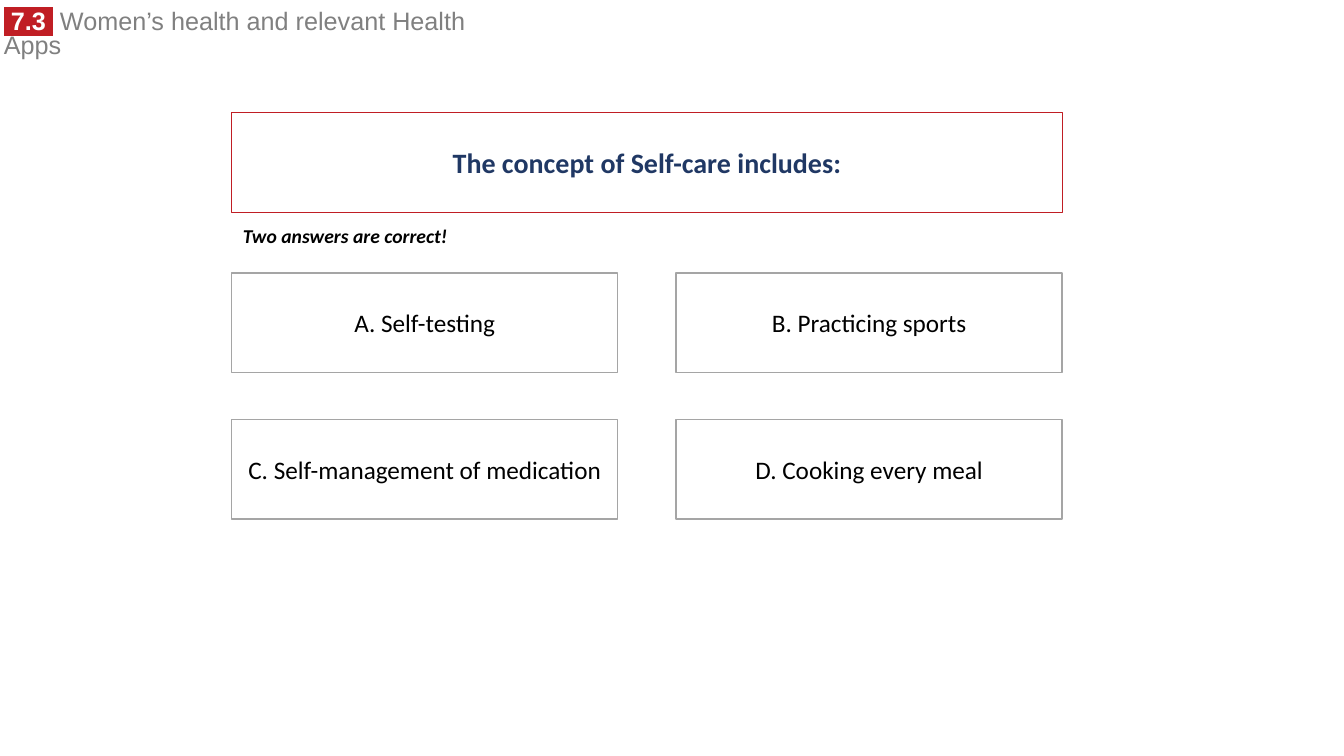
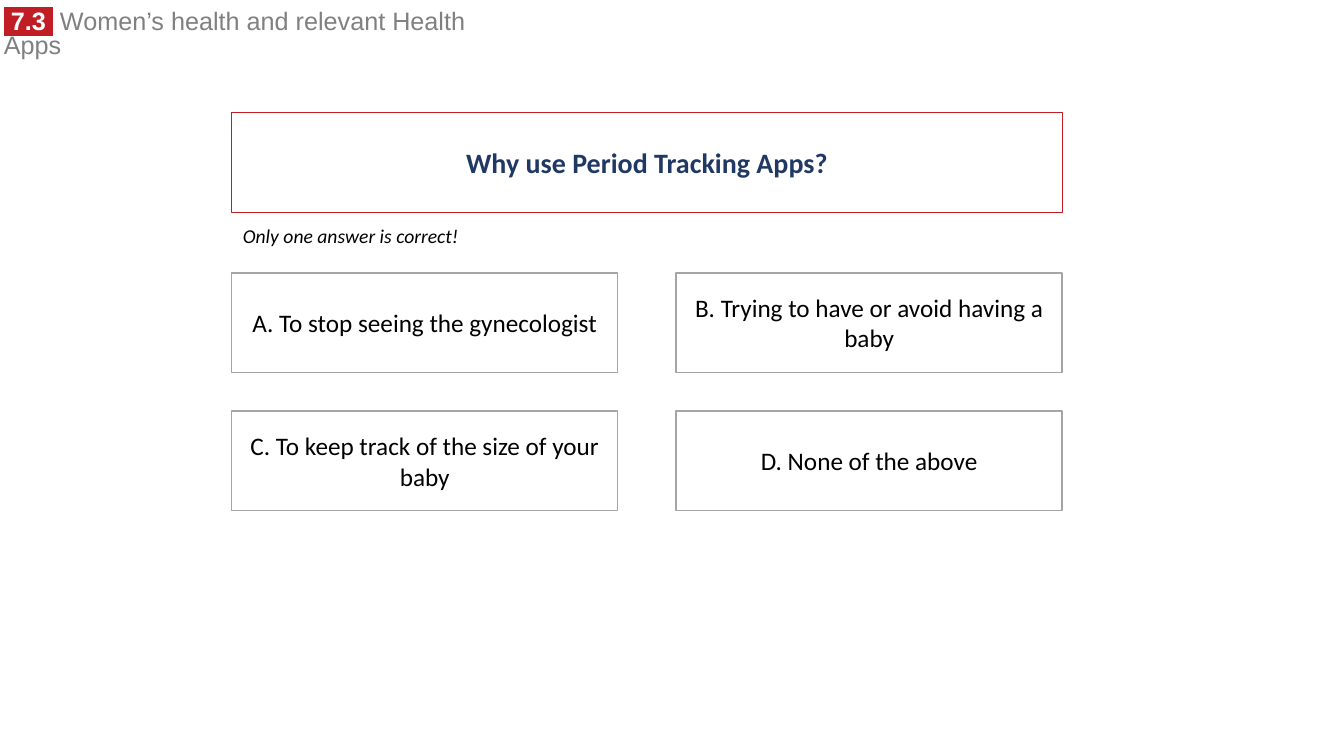
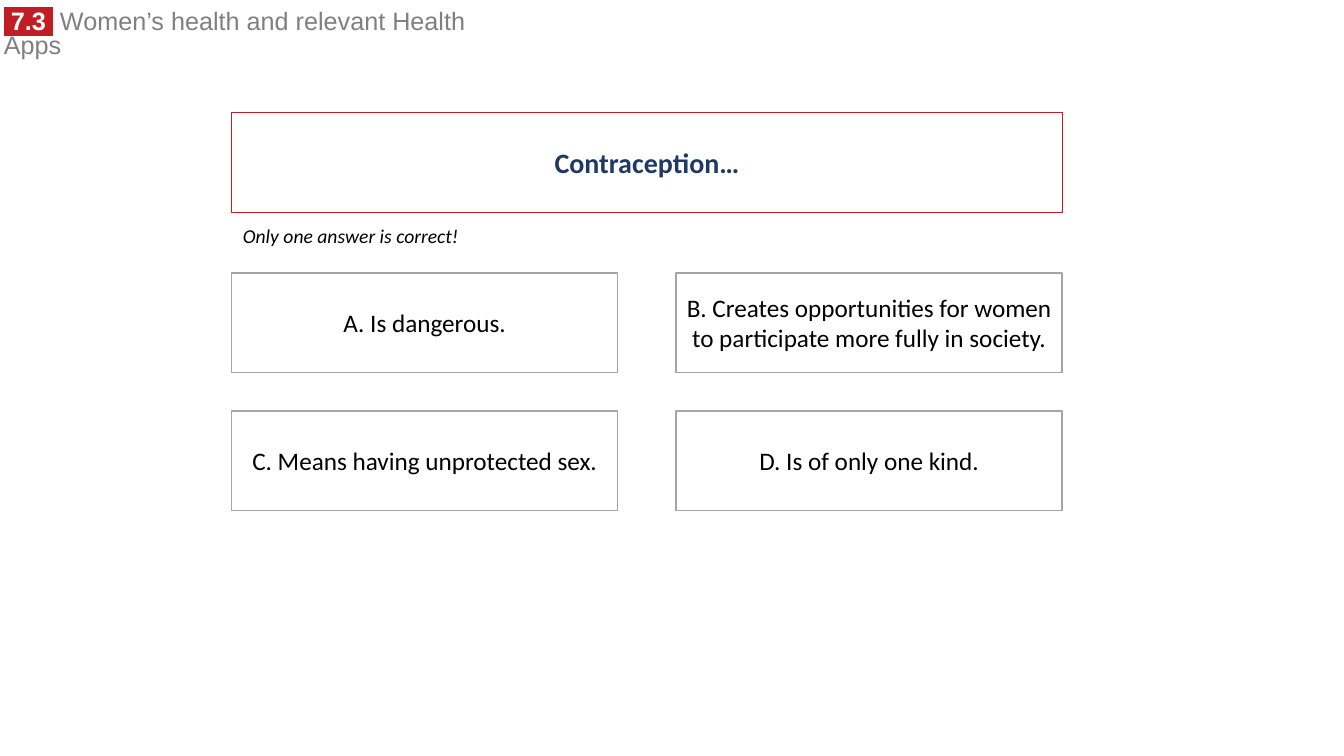
from dataclasses import dataclass

from lxml.etree import SubElement
from pptx import Presentation
from pptx.dml.color import RGBColor
from pptx.enum.shapes import MSO_SHAPE as Preset
from pptx.enum.text import MSO_ANCHOR as Anchor, MSO_AUTO_SIZE as AutoSize, PP_ALIGN as Align
from pptx.oxml.ns import qn
from pptx.util import Cm, Pt

# Content
SECTION = (" 7.3 ", " Women’s health and relevant Health Apps")
ONE_CORRECT = "Only one answer is correct!"
QUIZ = [
    {
        "question": "The concept of Self-care includes:",
        "note": "Two answers are correct!",
        "note_bold": True,
        "row_pitch": 3.69,
        "answers": ["A. Self-testing", "B. Practicing sports",
                    "C. Self-management of medication", "D. Cooking every meal"],
    },
    {
        "question": "Why use Period Tracking Apps?",
        "note": ONE_CORRECT,
        "note_bold": False,
        "row_pitch": 3.48,
        "answers": ["A. To stop seeing the gynecologist",
                    "B. Trying to have or avoid having a baby",
                    "C. To keep track of the size of your baby",
                    "D. None of the above"],
    },
    {
        "question": "Contraception…",
        "note": ONE_CORRECT,
        "note_bold": False,
        "row_pitch": 3.48,
        "answers": ["A. Is dangerous.",
                    "B. Creates opportunities for women to participate more fully in society.",
                    "C. Means having unprotected sex.", "D. Is of only one kind."],
    },
]


@dataclass(frozen=True)
class Theme:
    white: str = "FFFFFF"
    black: str = "000000"
    red: str = "C01E24"
    navy: str = "203864"
    header_gray: str = "808080"
    border_gray: str = "A5A5A5"
    header_font: str = "Arial"
    body_font: str = "Calibri"
    question_size: int = 20
    text_size: int = 18
    note_size: int = 14
    border: int = 1


THEME = Theme()

# Layout, in centimetres
PAGE = (33.87, 19.05)
HEADER = (-0.15, 0.15, 12.73, 0.89)
LEFT, WIDTH, CARD_HEIGHT = 5.84, 20.93, 2.51
QUESTION_TOP, ANSWER_TOP = 2.84, 6.88
ANSWER_WIDTH = 9.73
NOTE = (5.87, 5.51, 6, 0.86)
COLUMNS = 2
COLUMN_PITCH = WIDTH - ANSWER_WIDTH


def place(box, left, top, width, height):
    values = {"left": left, "top": top, "width": width, "height": height}
    for name, value in values.items():
        setattr(box, name, Cm(value))


def add_span(para, text, color, **formats):
    span = para.add_run()
    span.text = text
    span.font.color.rgb = RGBColor.from_string(color)
    for name, value in formats.items():
        setattr(span.font, name, value)
    return span


def style_card(box, border, text, color, **formats):
    """White outlined box with centred text."""
    box.fill.solid()
    box.fill.fore_color.rgb = RGBColor.from_string(THEME.white)
    box.line.color.rgb = RGBColor.from_string(border)
    box.line.width = Pt(THEME.border)
    frame = box.text_frame
    settings = {"word_wrap": True, "auto_size": AutoSize.NONE, "vertical_anchor": Anchor.MIDDLE}
    for name, value in settings.items():
        setattr(frame, name, value)
    para = frame.paragraphs[0]
    para.alignment = Align.CENTER
    add_span(para, text, color, name=THEME.body_font, **formats)


def add_text_box(page, area):
    box = page.shapes.add_textbox(*map(Cm, area))
    box.text_frame.word_wrap = True
    box.text_frame.auto_size = AutoSize.SHAPE_TO_FIT_TEXT
    return box, box.text_frame.paragraphs[0]


def move_header_to_layout(page, layout):
    """Section header, kept on the layout so that every page shows it."""
    for holder in list(layout.placeholders):
        if holder.placeholder_format.idx:
            holder.element.getparent().remove(holder.element)
    box, para = add_text_box(page, HEADER)
    para.line_spacing = 0.8
    font = {"name": THEME.header_font, "size": Pt(THEME.text_size)}
    number, title = SECTION
    badge = add_span(para, number, THEME.white, bold=True, **font)
    add_span(para, title, THEME.header_gray, bold=False, **font)
    # The highlight comes right after the text fill
    highlight = SubElement(badge.font.fill._xPr, qn("a:highlight"))
    SubElement(highlight, qn("a:srgbClr"), val=THEME.red)
    badge.font.fill._xPr.find(qn("a:solidFill")).addnext(highlight)
    layout.shapes.element.append(box.element)


def add_question(page, text):
    title = page.shapes.title
    place(title, LEFT, QUESTION_TOP, WIDTH, CARD_HEIGHT)
    outline = SubElement(title.element.spPr, qn("a:prstGeom"), prst="roundRect")
    SubElement(outline, qn("a:avLst"))
    style_card(title, THEME.red, text, THEME.navy, size=Pt(THEME.question_size), bold=True)


def add_answers(page, answers, row_pitch):
    for index, answer in enumerate(answers):
        row, column = divmod(index, COLUMNS)
        area = (LEFT + column * COLUMN_PITCH, ANSWER_TOP + row * row_pitch,
                ANSWER_WIDTH, CARD_HEIGHT)
        card = page.shapes.add_shape(Preset.RECTANGLE, *map(Cm, area))
        card.shadow.inherit = False
        style_card(card, THEME.border_gray, answer, THEME.black, size=Pt(THEME.text_size))


def add_note(page, text, bold):
    box, para = add_text_box(page, NOTE)
    add_span(para, text, THEME.black, name=THEME.body_font,
             size=Pt(THEME.note_size), bold=bold, italic=True)


def main():
    deck = Presentation()
    deck.slide_width, deck.slide_height = map(Cm, PAGE)
    layout = deck.slide_layouts.get_by_name("Title Only")
    pages = [deck.slides.add_slide(layout) for _ in QUIZ]
    move_header_to_layout(pages[0], layout)
    for page, item in zip(pages, QUIZ):
        add_question(page, item["question"])
        add_answers(page, item["answers"], item["row_pitch"])
        add_note(page, item["note"], item["note_bold"])
    deck.save("out.pptx")


if __name__ == "__main__":
    main()
